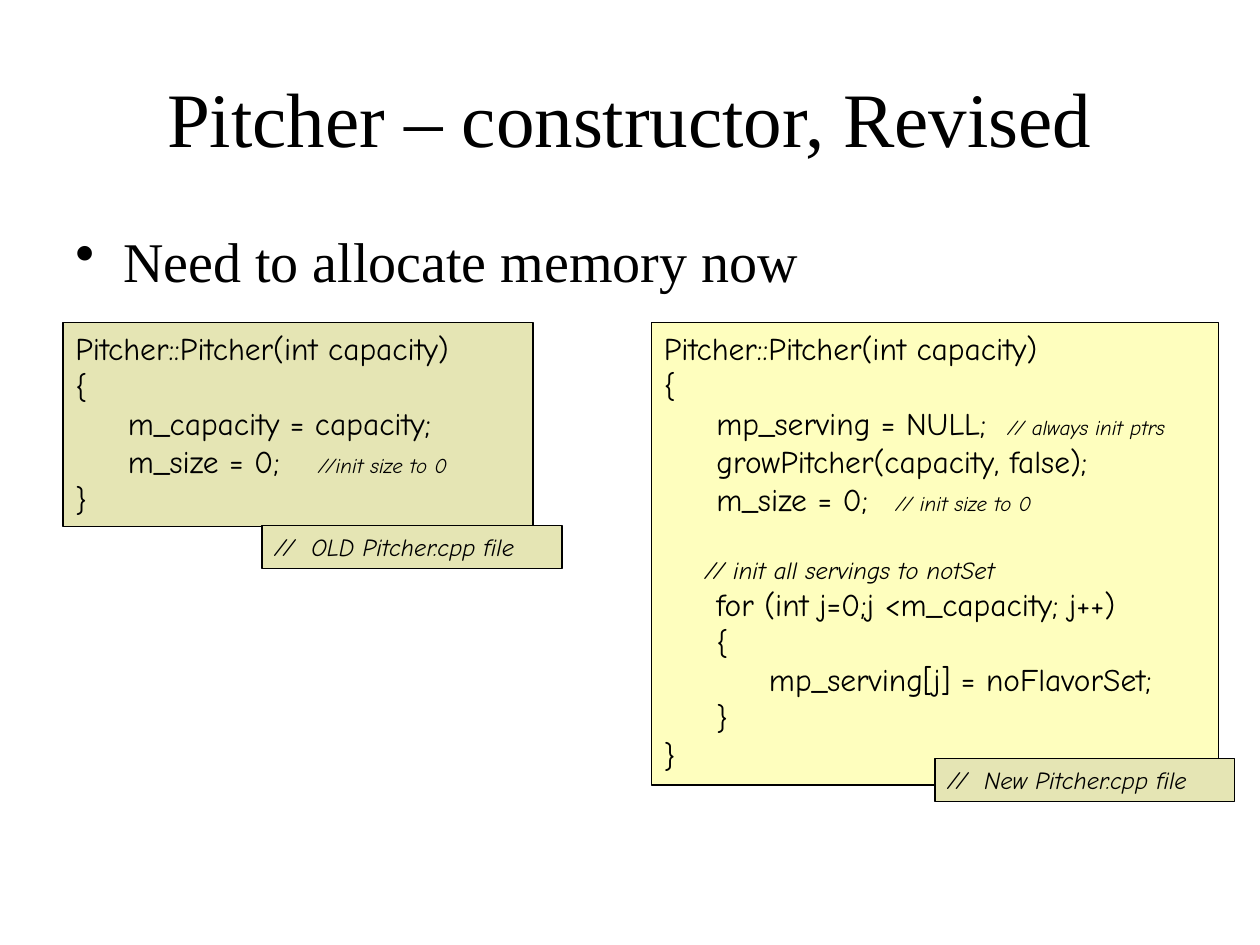
from lxml import etree
from pptx import Presentation
from pptx import util as u
from pptx.dml.color import RGBColor
from pptx.enum import shapes, text
from pptx.oxml.ns import qn

COLORS = {"ink": "000000", "old": "E5E5B4", "new": "FEFEBE"}
SERIF, HAND = "Times New Roman", "Comic Neue"
INDENT = " " * 5

OLD_CODE = [
    [("Pitcher::Pitcher(int capacity)", 18, False)],
    [("{", 18, False)],
    [(INDENT + "m_capacity = capacity;", 18, False)],
    [(INDENT + "m_size = 0;   ", 18, False), (" //init size to 0", 12, True)],
    [("}", 18, False)],
]
NEW_CODE = [
    [("Pitcher::Pitcher(int capacity)", 18, False)],
    [("{", 18, False)],
    [(INDENT + "mp_serving = NULL;  ", 18, False), ("// always init ptrs", 12, True)],
    [(INDENT + "growPitcher(capacity, false);", 18, False)],
    [(INDENT + "m_size = 0;", 18, False), (" ", 11, True), ("   // init size to 0", 12, True)],
    [(INDENT + "// init all servings to notSet", 14, True)],
    [(INDENT + "for (int j=0;j <m_capacity; j++)", 18, False)],
    [(INDENT + "{", 18, False)],
    [(INDENT * 2 + "mp_serving[j] = noFlavorSet;", 18, False)],
    [(INDENT + "}", 18, False)],
    [("}", 18, False)],
]
COMMENT_LINE = 5


def add_run(paragraph, wording, size, font_name, italic=False):
    """Append one styled run to a paragraph."""
    run = paragraph.add_run()
    run.text = wording
    run.font.size = u.Pt(size)
    run.font.name = font_name
    run.font.italic = italic
    run.font.color.rgb = RGBColor.from_string(COLORS["ink"])


def add_title(slide, box, wording):
    """Place the centred slide title in its box."""
    frame = slide.shapes.add_textbox(*map(u.Inches, box)).text_frame
    frame.word_wrap = True
    frame.vertical_anchor = text.MSO_ANCHOR.MIDDLE
    paragraph = frame.paragraphs[0]
    paragraph.alignment = text.PP_ALIGN.CENTER
    add_run(paragraph, wording, 44, SERIF)


def add_bullet(slide, box, wording):
    """Place the bulleted statement in its box."""
    frame = slide.shapes.add_textbox(*map(u.Inches, box)).text_frame
    frame.word_wrap = True
    paragraph = frame.paragraphs[0]
    properties = paragraph._p.get_or_add_pPr()
    properties.set("marL", str(u.Inches(0.38)))
    properties.set("indent", str(u.Inches(-0.38)))
    etree.SubElement(properties, qn("a:buChar"), char="•")
    add_run(paragraph, wording, 32, SERIF)


def add_panel(slide, box, fill, lines):
    """Place a bordered panel of code lines and return its paragraphs."""
    shape = slide.shapes.add_shape(shapes.MSO_SHAPE.RECTANGLE, *map(u.Inches, box))
    shape.shadow.inherit = False
    shape.fill.solid()
    shape.fill.fore_color.rgb = RGBColor.from_string(COLORS[fill])
    shape.line.color.rgb = RGBColor.from_string(COLORS["ink"])
    shape.line.width = u.Pt(0.75)
    frame = shape.text_frame
    frame.word_wrap = True
    frame.vertical_anchor = text.MSO_ANCHOR.TOP
    for number, runs in enumerate(lines):
        paragraph = frame.add_paragraph() if number else frame.paragraphs[0]
        paragraph.alignment = text.PP_ALIGN.LEFT
        for wording, size, italic in runs:
            add_run(paragraph, wording, size, HAND, italic)
    return frame.paragraphs


def build_slide(presentation):
    """Lay out the heading, both code panels and their file labels."""
    slide = presentation.slides.add_slide(presentation.slide_layouts[6])
    add_title(slide, (0.5, 0.3, 9, 1.25), "Pitcher – constructor, Revised")
    add_bullet(slide, (0.5, 1.75, 9, 4.95), "Need to allocate memory now")
    add_panel(slide, (0.5, 2.56, 3.73, 1.62), "old", OLD_CODE)
    new_lines = add_panel(slide, (5.17, 2.56, 4.5, 3.67), "new", NEW_CODE)
    new_lines[COMMENT_LINE].space_before = u.Pt(21.5)
    for left, top, label in ((2.08, 4.17, "OLD"), (7.42, 6.02, "New")):
        caption = [[(f"//  {label} Pitcher.cpp file", 14, True)]]
        add_panel(slide, (left, top, 2.38, 0.34), "old", caption)


def main():
    """Create the presentation and save it."""
    presentation = Presentation()
    presentation.slide_width = u.Inches(10)
    presentation.slide_height = u.Inches(7.5)
    build_slide(presentation)
    presentation.save("out.pptx")


if __name__ == "__main__":
    main()
